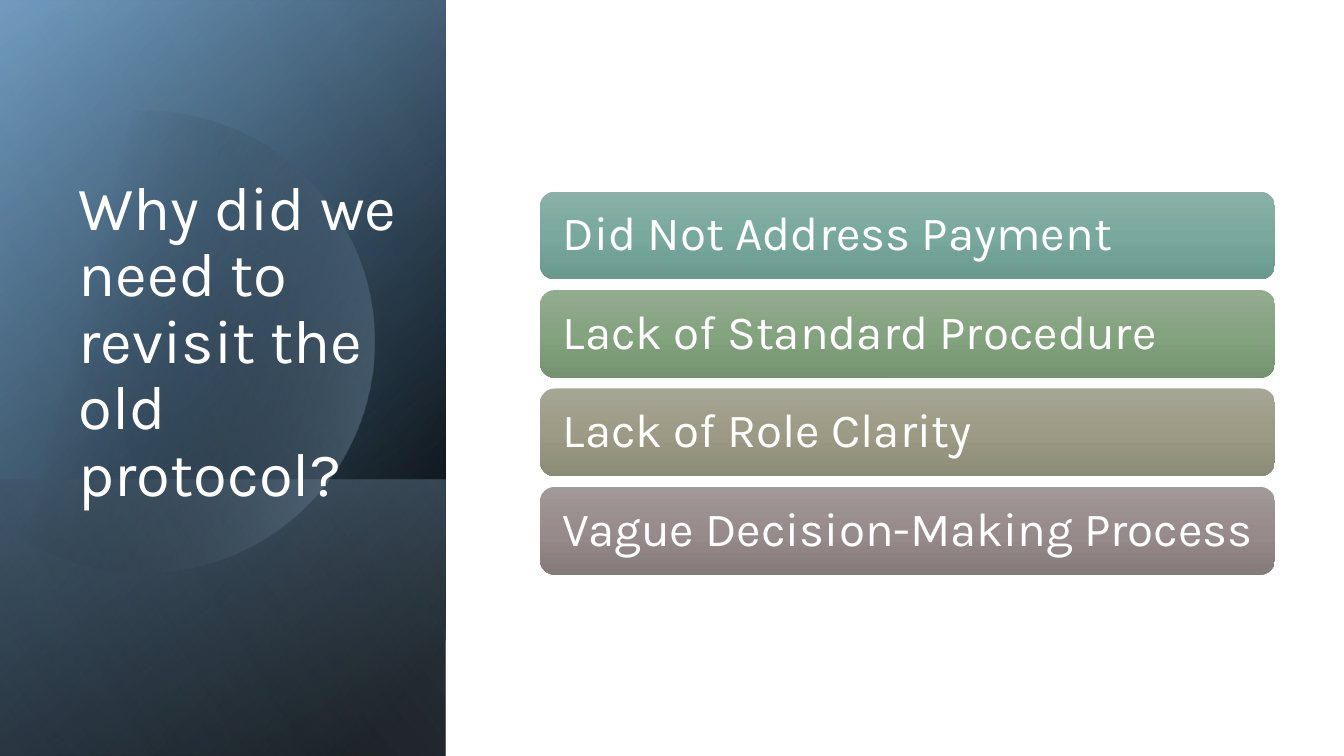
"""Build the slide on why the old protocol was revisited."""
import math

import lxml.etree
import pptx
import pptx.dml.color
import pptx.enum.shapes
import pptx.enum.text
import pptx.oxml.ns
import pptx.util

Cm = pptx.util.Cm
RGBColor = pptx.dml.color.RGBColor
SHAPES = pptx.enum.shapes.MSO_SHAPE
ANCHOR = pptx.enum.text.MSO_ANCHOR
ALIGN = pptx.enum.text.PP_ALIGN
qn = pptx.oxml.ns.qn

WHITE = RGBColor(0xFF, 0xFF, 0xFF)
BLACK = RGBColor(0x00, 0x00, 0x00)
BLUE = RGBColor(0x55, 0x8B, 0xB8)
SKY = RGBColor(0x94, 0xB6, 0xD2)
PALE_SKY = RGBColor(0xBF, 0xD3, 0xE4)
TEAL = [RGBColor(0x8A, 0xB1, 0xA8), RGBColor(0x79, 0xA9, 0x9E), RGBColor(0x69, 0x99, 0x8E)]
GREEN = [RGBColor(0x93, 0xAC, 0x8F), RGBColor(0x84, 0xA3, 0x7F), RGBColor(0x74, 0x93, 0x6F)]
OLIVE = [RGBColor(0xA7, 0xA5, 0x94), RGBColor(0x9D, 0x9B, 0x85), RGBColor(0x8C, 0x8B, 0x75)]
MAUVE = [RGBColor(0xA2, 0x99, 0x99), RGBColor(0x97, 0x8B, 0x8B), RGBColor(0x86, 0x7B, 0x7B)]


def paint(shape, stops, angle):
    """Fill with a linear gradient of (position, colour, opacity) stops."""
    shape.shadow.inherit = False
    shape.line.fill.background()
    shape.fill.gradient()
    gradient = shape.element.spPr.find(qn("a:gradFill"))
    gradient.set("rotWithShape", "1")
    for part in list(gradient):
        gradient.remove(part)
    stop_list = lxml.etree.SubElement(gradient, qn("a:gsLst"))
    for position, color, opacity in stops:
        stop = lxml.etree.SubElement(stop_list, qn("a:gs"), pos=str(position * 1000))
        tint = lxml.etree.SubElement(stop, qn("a:srgbClr"), val=str(color))
        if opacity < 100:
            lxml.etree.SubElement(tint, qn("a:alpha"), val=str(opacity * 1000))
    lxml.etree.SubElement(gradient, qn("a:lin"), ang=str(angle * 60000), scaled="0")


def add_panel(left, top, width, stops, angle):
    """Add one turned and mirrored layer of the side panel."""
    panel = slide.shapes.add_shape(SHAPES.RECTANGLE, Cm(left), Cm(top), Cm(width), Cm(11.23))
    panel.rotation = 90
    panel.element.spPr.find(qn("a:xfrm")).set("flipH", "1")
    paint(panel, stops, angle)


presentation = pptx.Presentation()
presentation.slide_width = Cm(33.87)
presentation.slide_height = Cm(19.05)
slide = presentation.slides.add_slide(presentation.slide_layouts[5])

add_panel(-3.91, 3.91, 19.05, [(8, BLACK, 100), (100, BLUE, 100)], 50)
add_panel(-3.91, 3.92, 19.05, [(0, BLACK, 0), (99, SKY, 46)], 30)
add_panel(2.13, 9.96, 6.96, [(2, SKY, 29), (100, BLACK, 30)], 130)

center_x, center_y, radius, cut_x = 3.63, 8.61, 5.82, -0.38
reach = math.acos((cut_x - center_x) / radius)
steps = 120
rim = []
for step in range(steps + 1):
    turn = reach * (2 * step / steps - 1)
    rim.append((Cm(center_x + radius * math.cos(turn)), Cm(center_y + radius * math.sin(turn))))
outline = slide.shapes.build_freeform(*rim[0])
outline.add_line_segments(rim[1:], close=True)
disc = outline.convert_to_shape()
paint(disc, [(29, BLACK, 0), (100, SKY, 43)], 14)

add_panel(-3.91, 3.91, 19.05, [(0, BLACK, 0), (99, PALE_SKY, 11)], 120)

question = slide.shapes.title
question.left, question.top, question.width, question.height = Cm(1.73), Cm(6.32), Cm(8.66), Cm(6.65)
slide.shapes._spTree.append(question.element)
question_frame = question.text_frame
question_frame.text = "Why did we need to revisit the old protocol?"
question_frame.word_wrap = True
question_frame.auto_size = pptx.enum.text.MSO_AUTO_SIZE.NONE
question_frame.vertical_anchor = ANCHOR.BOTTOM
question_text = question_frame.paragraphs[0]
question_size = 44

reason_texts = []
reasons = [
    ("Did Not Address Payment", TEAL),
    ("Lack of Standard Procedure", GREEN),
    ("Lack of Role Clarity", OLIVE),
    ("Vague Decision-Making Process", MAUVE),
]
for row, (reason, shades) in enumerate(reasons):
    bar = slide.shapes.add_shape(
        SHAPES.ROUNDED_RECTANGLE, Cm(13.61), Cm(4.83 + 2.48 * row), Cm(18.52), Cm(2.21))
    paint(bar, [(50 * place, shade, 100) for place, shade in enumerate(shades)], 90)
    frame = bar.text_frame
    frame.text = reason
    frame.word_wrap = True
    frame.vertical_anchor = ANCHOR.MIDDLE
    frame.margin_left = Cm(0.47)
    frame.margin_right = Cm(0.4)
    reason_texts.append((frame.paragraphs[0], 34))

for paragraph, size in [(question_text, question_size)] + reason_texts:
    paragraph.alignment = ALIGN.LEFT
    paragraph.line_spacing = 0.9
    paragraph.font.name = "Karla"
    paragraph.font.size = pptx.util.Pt(size)
    paragraph.font.color.rgb = WHITE

presentation.save("out.pptx")
